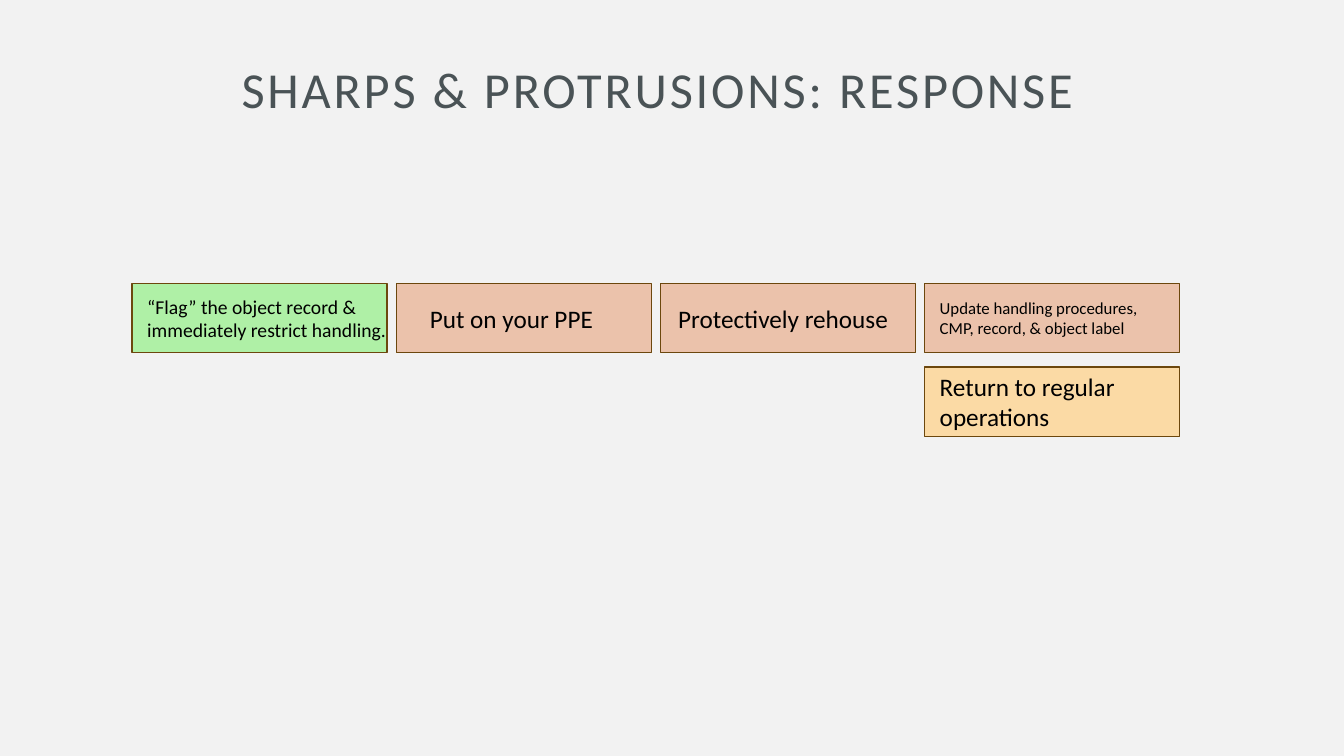
from dataclasses import dataclass

from pptx import Presentation
from pptx.dml.color import RGBColor
from pptx.enum.shapes import MSO_SHAPE
from pptx.enum.text import MSO_ANCHOR, MSO_AUTO_SIZE, PP_ALIGN
from pptx.util import Inches, Pt


@dataclass(frozen=True)
class Theme:
    font: str = "Calibri"
    background: str = "F2F2F2"
    title: str = "4A5356"
    text: str = "000000"
    outline: str = "6C470D"
    flag: str = "AFF0A6"
    action: str = "EBC2AB"
    finish: str = "FBDAA5"
    title_size: int = 36
    large: int = 18
    medium: int = 14
    small: int = 12


@dataclass(frozen=True)
class Grid:
    left: float = 1.31
    top: float = 2.81
    column: float = 2.62
    row: float = 0.83
    card_width: float = 2.53
    card_height: float = 0.69

    def position(self, column, row):
        return (Inches(self.left + column * self.column),
                Inches(self.top + row * self.row))


class SlideBuilder:
    def __init__(self, deck, theme, grid):
        self.deck, self.theme, self.grid = deck, theme, grid
        self.page = deck.slides.add_slide(deck.slide_layouts[5])
        fill = self.page.background.fill
        fill.solid()
        fill.fore_color.rgb = RGBColor.from_string(theme.background)

    def style(self, para, size, color):
        for span in para.runs:
            span.font.name = self.theme.font
            span.font.size = Pt(size)
            span.font.color.rgb = RGBColor.from_string(color)

    def title(self, text, left, top, width, height):
        box = self.page.shapes.title
        box.left, box.width = (round(self.deck.slide_width * share) for share in (left, width))
        box.top, box.height = (round(self.deck.slide_height * share) for share in (top, height))
        frame = box.text_frame
        frame.text = text
        frame.word_wrap = True
        frame.auto_size = MSO_AUTO_SIZE.NONE
        frame.vertical_anchor = MSO_ANCHOR.MIDDLE
        frame.margin_left = frame.margin_right = Inches(0.2)
        frame.margin_top = frame.margin_bottom = 0
        para = frame.paragraphs[0]
        para.alignment = PP_ALIGN.CENTER
        para.line_spacing = 0.9
        self.style(para, self.theme.title_size, self.theme.title)
        para.runs[0].font._element.set("spc", "200")

    def card(self, column, row, color):
        card = self.page.shapes.add_shape(
            MSO_SHAPE.RECTANGLE, *self.grid.position(column, row),
            Inches(self.grid.card_width), Inches(self.grid.card_height))
        card.shadow.inherit = False
        card.fill.solid()
        card.fill.fore_color.rgb = RGBColor.from_string(color)
        card.line.color.rgb = RGBColor.from_string(self.theme.outline)
        card.line.width = Pt(1)

    def label(self, text, column, row, columns, size):
        box = self.page.shapes.add_textbox(
            *self.grid.position(column, row),
            Inches(columns * self.grid.column), Inches(self.grid.card_height))
        frame = box.text_frame
        frame.text = text
        frame.word_wrap = True
        frame.vertical_anchor = MSO_ANCHOR.MIDDLE
        self.style(frame.paragraphs[0], size, self.theme.text)


def main():
    deck = Presentation()
    deck.slide_width, deck.slide_height = Inches(13.33), Inches(7.5)
    theme = Theme()
    slide = SlideBuilder(deck, theme, Grid())
    slide.title("SHARPS & PROTRUSIONS: RESPONSE", 0.066, 0.07, 0.847, 0.103)

    steps = [
        (0, 0, theme.flag, "“Flag” the object record & immediately restrict handling.",
         0.02, 1.02, theme.medium),
        (1, 0, theme.action, "Put on your PPE", 0.09, 0.91, theme.large),
        (2, 0, theme.action, "Protectively rehouse", 0.03, 1.02, theme.large),
        (3, 0, theme.action, "Update handling procedures, CMP, record, & object label",
         0.02, 0.95, theme.small),
        (3, 1, theme.finish, "Return to regular operations", 0.02, 0.88, theme.large),
    ]
    for column, row, color, text, indent, columns, size in steps:
        slide.card(column, row, color)
        slide.label(text, column + indent, row, columns, size)
    deck.save("out.pptx")


if __name__ == "__main__":
    main()
